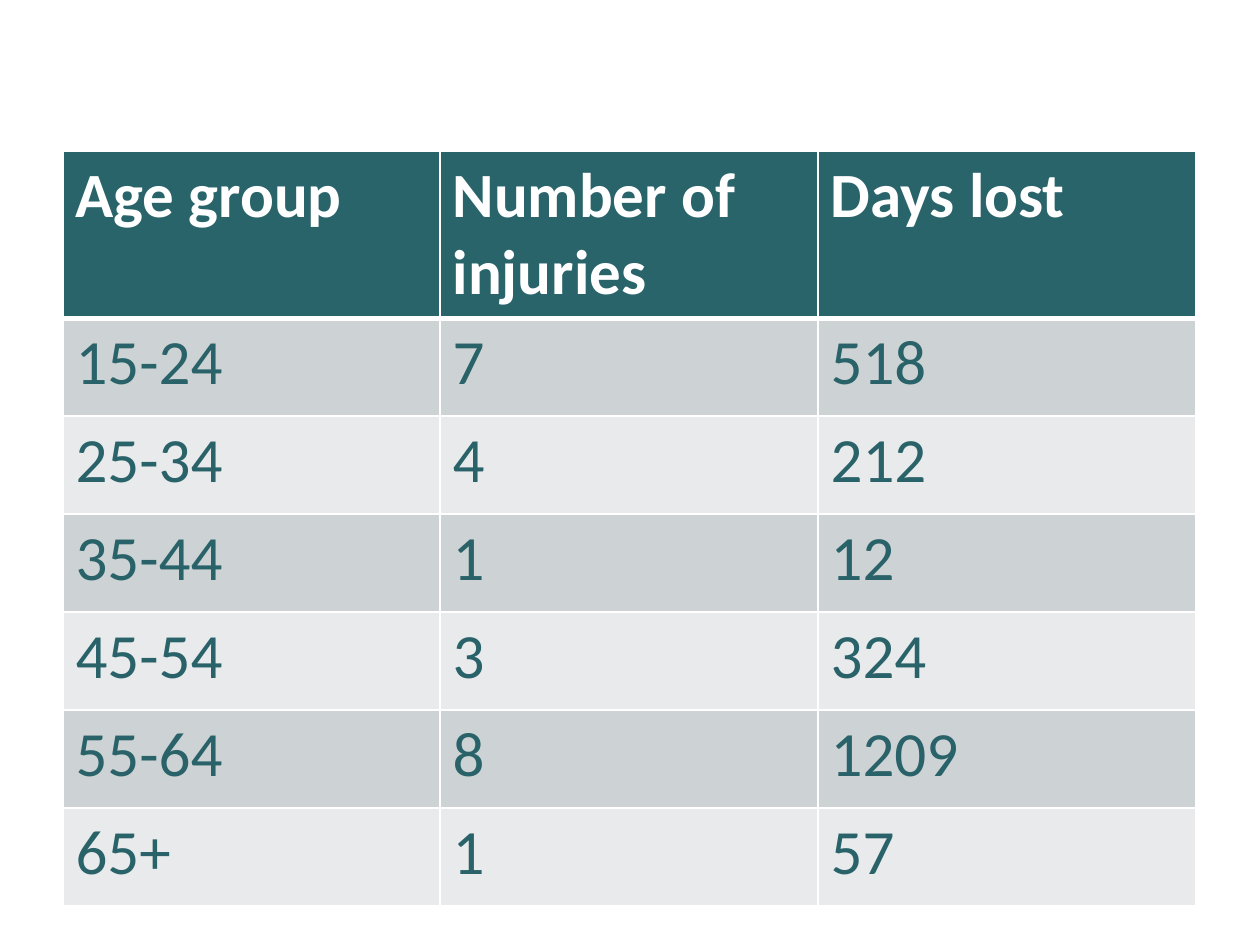
"""Build a slide with a table of injuries and days lost by age group."""
from lxml import etree
from pptx import Presentation
from pptx import util as u
from pptx.dml import color
from pptx.oxml import ns

HUES = {"head": "2A646B", "text": "296269", "odd": "CDD3D4",
        "even": "E8EAEB", "white": "FFFFFF"}
ROWS = [
    ("Age group", "Number of injuries", "Days lost"),
    ("15-24", "7", "518"),
    ("25-34", "4", "212"),
    ("35-44", "1", "12"),
    ("45-54", "3", "324"),
    ("55-64", "8", "1209"),
    ("65+", "1", "57"),
]
WIDTHS = (215.5, 216, 216)
HEIGHTS = [95] + [56] * (len(ROWS) - 1)


def tint(name):
    return color.RGBColor.from_string(HUES[name])


def add_edge(cell, side, width):
    props = cell._tc.get_or_add_tcPr()
    line = etree.SubElement(props, ns.qn("a:ln" + side), w=str(u.Pt(width)))
    fill = etree.SubElement(line, ns.qn("a:solidFill"))
    etree.SubElement(fill, ns.qn("a:srgbClr"), val=HUES["white"])


def fill_cell(cell, words, row):
    head = row == 0
    for side in "LRTB":
        thick = (head and side == "B") or (row == 1 and side == "T")
        add_edge(cell, side, 3 if thick else 1)
    cell.fill.solid()
    cell.fill.fore_color.rgb = tint("head" if head else "odd" if row % 2 else "even")
    run = cell.text_frame.paragraphs[0].add_run()
    run.text = words
    run.font.name = "Calibri"
    run.font.size = u.Pt(36)
    run.font.bold = head
    run.font.color.rgb = tint("white" if head else "text")


def add_grid(slide):
    frame = slide.shapes.add_table(len(ROWS), len(WIDTHS), u.Pt(36), u.Pt(86.5),
                                   u.Pt(sum(WIDTHS)), u.Pt(sum(HEIGHTS)))
    grid = frame.table
    for col, width in zip(grid.columns, WIDTHS):
        col.width = u.Pt(width)
    for row, height in zip(grid.rows, HEIGHTS):
        row.height = u.Pt(height)
    for r, items in enumerate(ROWS):
        for c, words in enumerate(items):
            fill_cell(grid.cell(r, c), words, r)


def main():
    deck = Presentation()
    deck.slide_width, deck.slide_height = u.Pt(720), u.Pt(540)
    slide = deck.slides.add_slide(deck.slide_layouts[6])
    add_grid(slide)
    deck.save("out.pptx")


if __name__ == "__main__":
    main()
